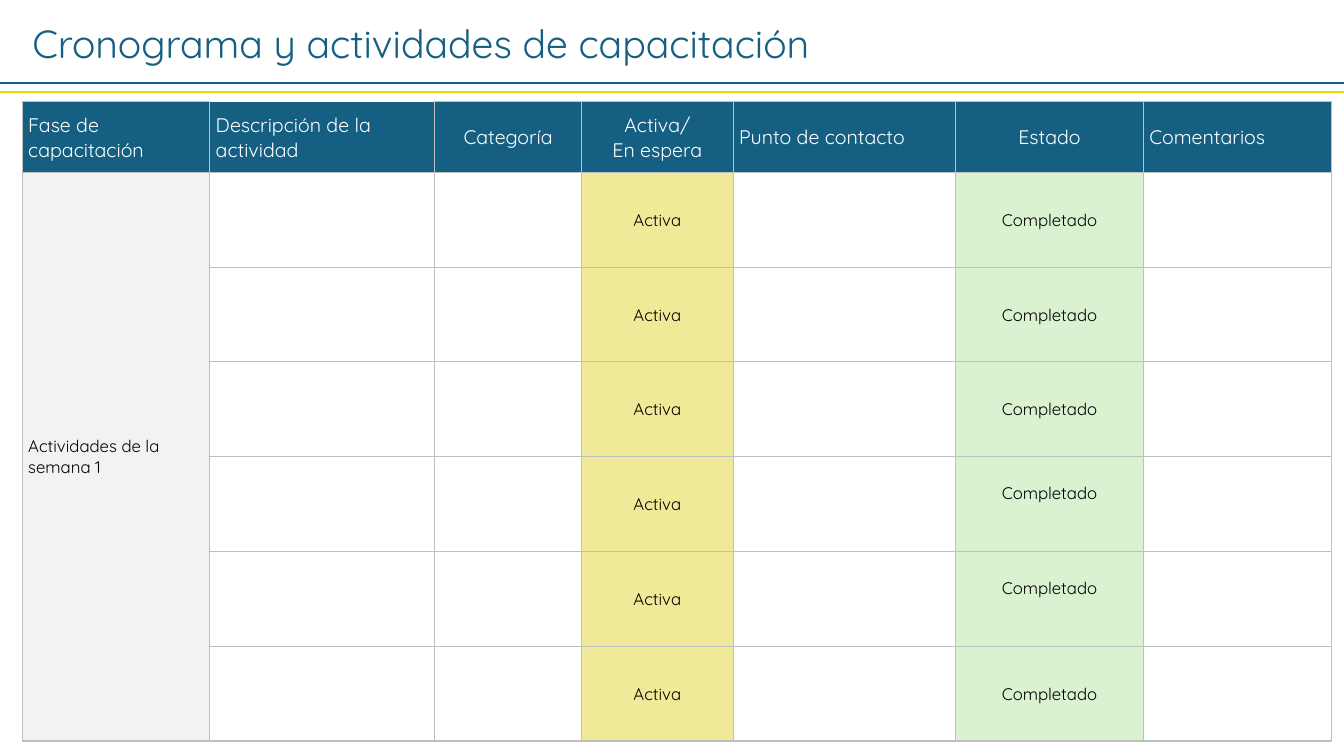
from lxml.etree import SubElement
from pptx import Presentation
from pptx.dml.color import RGBColor
from pptx.enum.shapes import MSO_CONNECTOR as CONN
from pptx.enum.text import MSO_ANCHOR as ANCHOR, PP_ALIGN as ALIGN
from pptx.oxml.ns import qn
from pptx.util import Inches, Pt

FONT = "Quicksand"
BLUE, YELLOW, GREY = "156082", "E8DD06", "BFBFBF"
WIDTHS = [1.86, 2.23, 1.46, 1.5, 2.21, 1.86, 1.86]
HEADER_H, ROW_H, ACTIVITIES = 0.7, 0.94, 6
HEADERS = ["Fase de capacitación", "Descripción de la actividad", "Categoría",
           "Activa/\vEn espera", "Punto de contacto", "Estado", "Comentarios"]
CENTERED = {2, 3, 5}
STATUS = {3: ("Activa", "F0EA98"), 5: ("Completado", "DAF2D0")}
RAISED_STATUS = {(4, 5), (5, 5)}


def rgb(value):
    return RGBColor.from_string(value)


def format_text(tf, size, color, align=ALIGN.LEFT):
    for p in tf.paragraphs:
        p.alignment = align
        p.font.size = Pt(size)
        for r in p.runs:
            r.font.name = FONT
            r.font.size = Pt(size)
            r.font.color.rgb = rgb(color)


def add_title(s, text):
    sp = s.shapes.title
    sp.left, sp.top = Inches(0.22), Inches(0.14)
    sp.width, sp.height = Inches(10.99), Inches(0.57)
    tf = sp.text_frame
    tf.text = text
    tf.word_wrap = True
    tf.vertical_anchor = ANCHOR.TOP
    format_text(tf, 28, BLUE)


def add_rule(s, y, color):
    line = s.shapes.add_connector(
        CONN.STRAIGHT, 0, Inches(y), Inches(13.33), Inches(y))
    line.line.color.rgb = rgb(color)
    line.line.width = Pt(1.5)
    SubElement(line._element.spPr, qn("a:effectLst"))


def set_borders(cell, widths):
    tcPr = cell._tc.get_or_add_tcPr()
    for side in "LRTB":
        width = widths.get(side, 0.5)
        ln = SubElement(tcPr, qn(f"a:ln{side}"), w=str(Pt(width)))
        if width:
            fill = SubElement(ln, qn("a:solidFill"))
            SubElement(fill, qn("a:srgbClr"), val=GREY)
        else:
            SubElement(ln, qn("a:noFill"))


def fill_cell(cell, text, fill, size, color, centered):
    cell.fill.solid()
    cell.fill.fore_color.rgb = rgb(fill)
    cell.vertical_anchor = ANCHOR.MIDDLE
    cell.margin_left = Inches(0.01 if centered else 0.06)
    cell.margin_right = cell.margin_top = Inches(0.01)
    cell.margin_bottom = 0
    cell.text_frame.text = text
    format_text(cell.text_frame, size, color,
                ALIGN.CENTER if centered else ALIGN.LEFT)


def add_schedule(s):
    height = HEADER_H + ROW_H * ACTIVITIES
    table = s.shapes.add_table(
        ACTIVITIES + 1, len(WIDTHS), Inches(0.22), Inches(1.01),
        Inches(sum(WIDTHS)), Inches(height)).table
    table.first_row = table.horz_banding = False
    for column, width in zip(table.columns, WIDTHS):
        column.width = Inches(width)
    for i, row in enumerate(table.rows):
        row.height = Inches(ROW_H if i else HEADER_H)
        for j, cell in enumerate(row.cells):
            widths = {"B": 1.5} if i == ACTIVITIES or (i and j == 0) else {}
            if (i, j) == (0, 1):
                widths = {"T": 0}
            set_borders(cell, widths)
            if i == 0:
                fill_cell(cell, HEADERS[j], BLUE, 14, "FFFFFF", j in CENTERED)
            elif j in STATUS:
                fill_cell(cell, *STATUS[j], 12, "000000", True)
            else:
                cell.fill.background()
            if (i, j) in RAISED_STATUS:
                cell.margin_bottom = Inches(0.22)
    phase = table.cell(1, 0)
    phase.merge(table.cell(ACTIVITIES, 0))
    fill_cell(phase, "Actividades de la semana 1", "F2F2F2", 12, "000000", False)


def main():
    prs = Presentation()
    prs.slide_width, prs.slide_height = Inches(13.33), Inches(7.5)
    s = prs.slides.add_slide(prs.slide_layouts[5])
    add_title(s, "Cronograma y actividades de capacitación")
    add_rule(s, 0.82, BLUE)
    add_rule(s, 0.91, YELLOW)
    add_schedule(s)
    prs.save("out.pptx")


if __name__ == "__main__":
    main()
